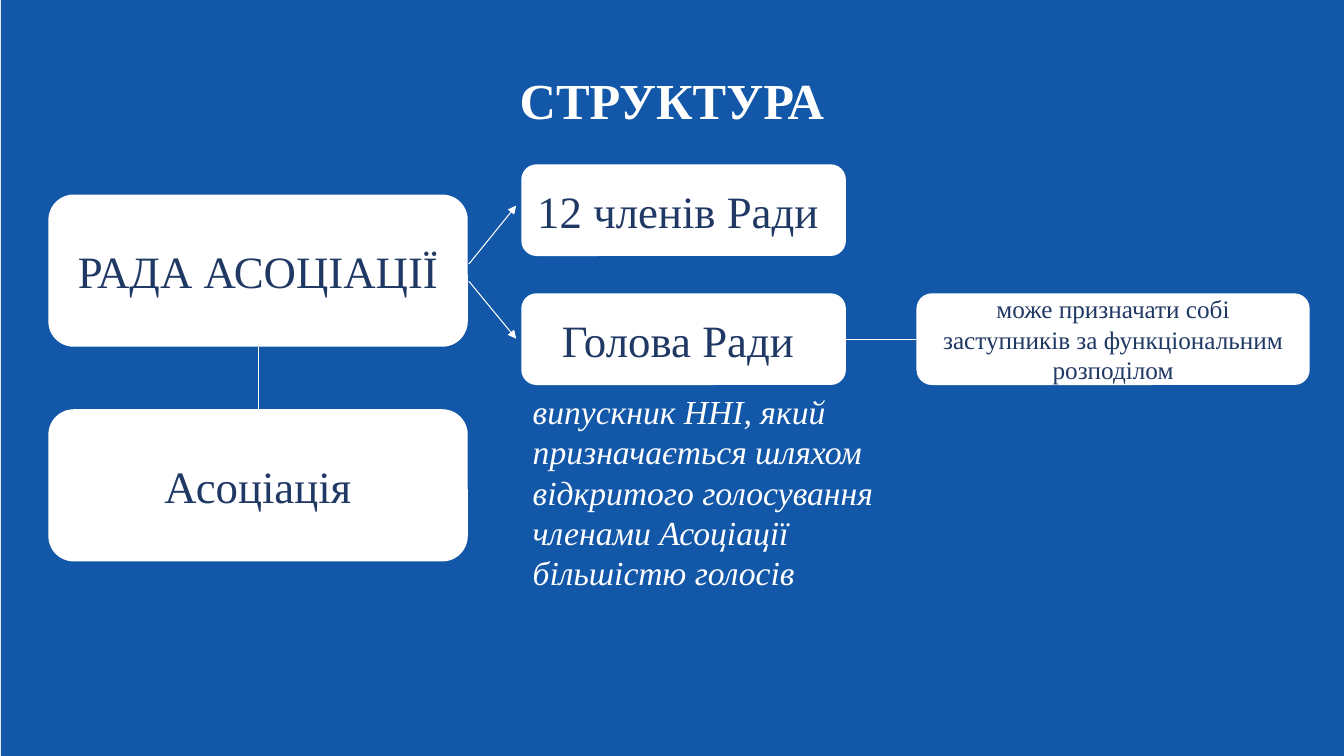
from lxml import etree
from pptx import Presentation
from pptx.dml.color import RGBColor
from pptx.enum.shapes import MSO_CONNECTOR, MSO_SHAPE
from pptx.enum.text import MSO_ANCHOR, MSO_AUTO_SIZE, PP_ALIGN
from pptx.oxml.ns import qn
from pptx.util import Pt

RECTANGLE = MSO_SHAPE.RECTANGLE
ROUNDED = MSO_SHAPE.ROUNDED_RECTANGLE
STRAIGHT = MSO_CONNECTOR.STRAIGHT
TOP, MIDDLE = MSO_ANCHOR.TOP, MSO_ANCHOR.MIDDLE
GROW = MSO_AUTO_SIZE.SHAPE_TO_FIT_TEXT
LEFT, CENTER = PP_ALIGN.LEFT, PP_ALIGN.CENTER
SIDE_TOP, SIDE_LEFT, SIDE_BOTTOM, SIDE_RIGHT = range(4)

EMU_PER_PX = 9144
WIDTH, HEIGHT = 1333, 750
TITLE_ONLY = 5


def px(length):
    return length * EMU_PER_PX


def color(code):
    return RGBColor.from_string(code)


class StructurePage:
    """Holds the style and the current slide of the structure diagram."""

    font = "Times New Roman"
    blue, white, navy = "1357A8", "FFFFFF", "1F3864"

    def __init__(self, deck):
        self.page = deck.slides.add_slide(deck.slide_layouts[TITLE_ONLY])
        self.shapes = self.page.shapes

    def add_text(self, frame, text, size, ink, align=CENTER, bold=False, italic=False):
        frame.word_wrap = True
        para = frame.paragraphs[0]
        para.alignment = align
        span = para.add_run()
        span.text = text
        span.font.name = self.font
        span.font.size = Pt(size)
        span.font.bold = bold
        span.font.italic = italic
        span.font.color.rgb = color(ink)

    def shape(self, kind, place, fill=None):
        box = self.shapes.add_shape(kind, *map(px, place))
        box.shadow.inherit = False
        box.line.fill.background()
        if fill:
            box.fill.solid()
            box.fill.fore_color.rgb = color(fill)
        else:
            box.fill.background()
        return box

    def backdrop(self, *place):
        panel = self.shape(RECTANGLE, place, self.blue)
        self.shapes.element.insert(2, panel.element)

    def title(self, text, *place):
        heading = self.shapes.title
        heading.left, heading.top, heading.width, heading.height = map(px, place)
        frame = heading.text_frame
        frame.vertical_anchor = TOP
        frame.auto_size = GROW
        self.add_text(frame, text, 36, self.white, bold=True)

    def card(self, text, size, *place):
        box = self.shape(ROUNDED, place, self.white)
        box.text_frame.vertical_anchor = MIDDLE
        self.add_text(box.text_frame, text, size, self.navy)
        return box

    def note(self, text, *place):
        box = self.shape(ROUNDED, place)
        box.text_frame.vertical_anchor = MIDDLE
        self.add_text(box.text_frame, text, 24, self.white, LEFT, italic=True)

    def line(self, *ends):
        link = self.shapes.add_connector(STRAIGHT, *map(px, ends))
        link.line.color.rgb = color(self.white)
        link.line.width = Pt(0.75)
        etree.SubElement(link.element.spPr, qn("a:effectLst"))
        return link

    def arrow(self, *ends):
        outline = self.line(*ends).element.spPr.find(qn("a:ln"))
        etree.SubElement(outline, qn("a:tailEnd"), type="triangle")

    def join(self, start, start_side, end, end_side):
        link = self.line(0, 0, 0, 0)
        link.begin_connect(start, start_side)
        link.end_connect(end, end_side)


def main():
    deck = Presentation()
    deck.slide_width, deck.slide_height = px(WIDTH), px(HEIGHT)
    page = StructurePage(deck)

    page.backdrop(1, -2, WIDTH, HEIGHT + 2)
    page.title("СТРУКТУРА", 48, 64, 1237, 71)

    council = page.card("РАДА АСОЦІАЦІЇ", 32, 48, 193, 416, 151)
    association = page.card("Асоціація", 32, 48, 406, 416, 151)
    page.card("12 членів Ради ", 32, 517, 163, 322, 91)
    head = page.card("Голова Ради ", 32, 517, 291, 322, 91)

    page.arrow(465, 262, 512, 204)
    page.arrow(465, 279, 512, 336)
    page.join(council, SIDE_BOTTOM, association, SIDE_TOP)

    page.note(
        "випускник ННІ, який призначається шляхом відкритого голосування "
        "членами Асоціації більшістю голосів",
        507, 370, 402, 236,
    )
    deputies = page.card(
        "може призначати собі заступників за функціональним розподілом",
        18, 909, 291, 390, 91,
    )
    page.join(head, SIDE_RIGHT, deputies, SIDE_LEFT)

    deck.save("out.pptx")


if __name__ == "__main__":
    main()
